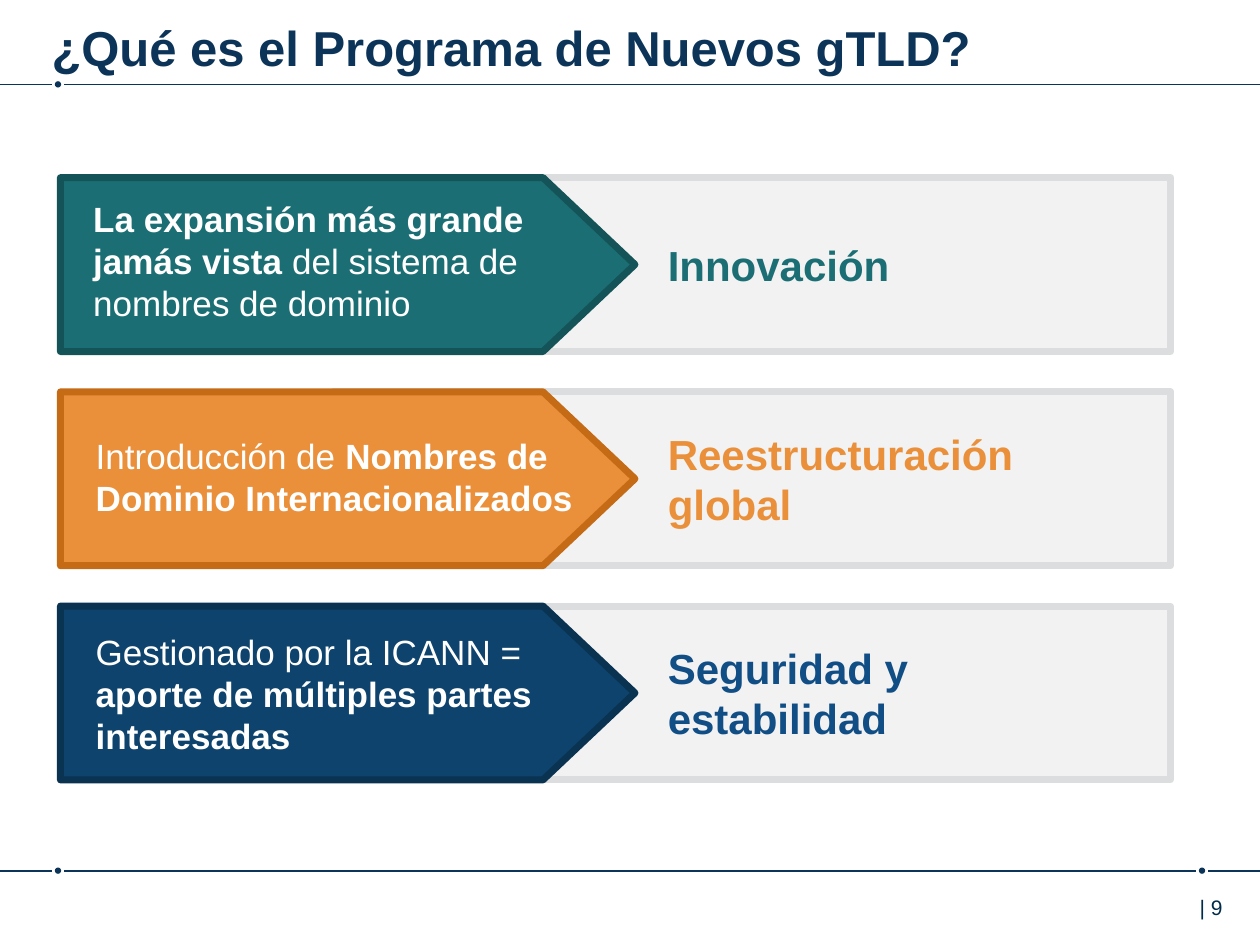
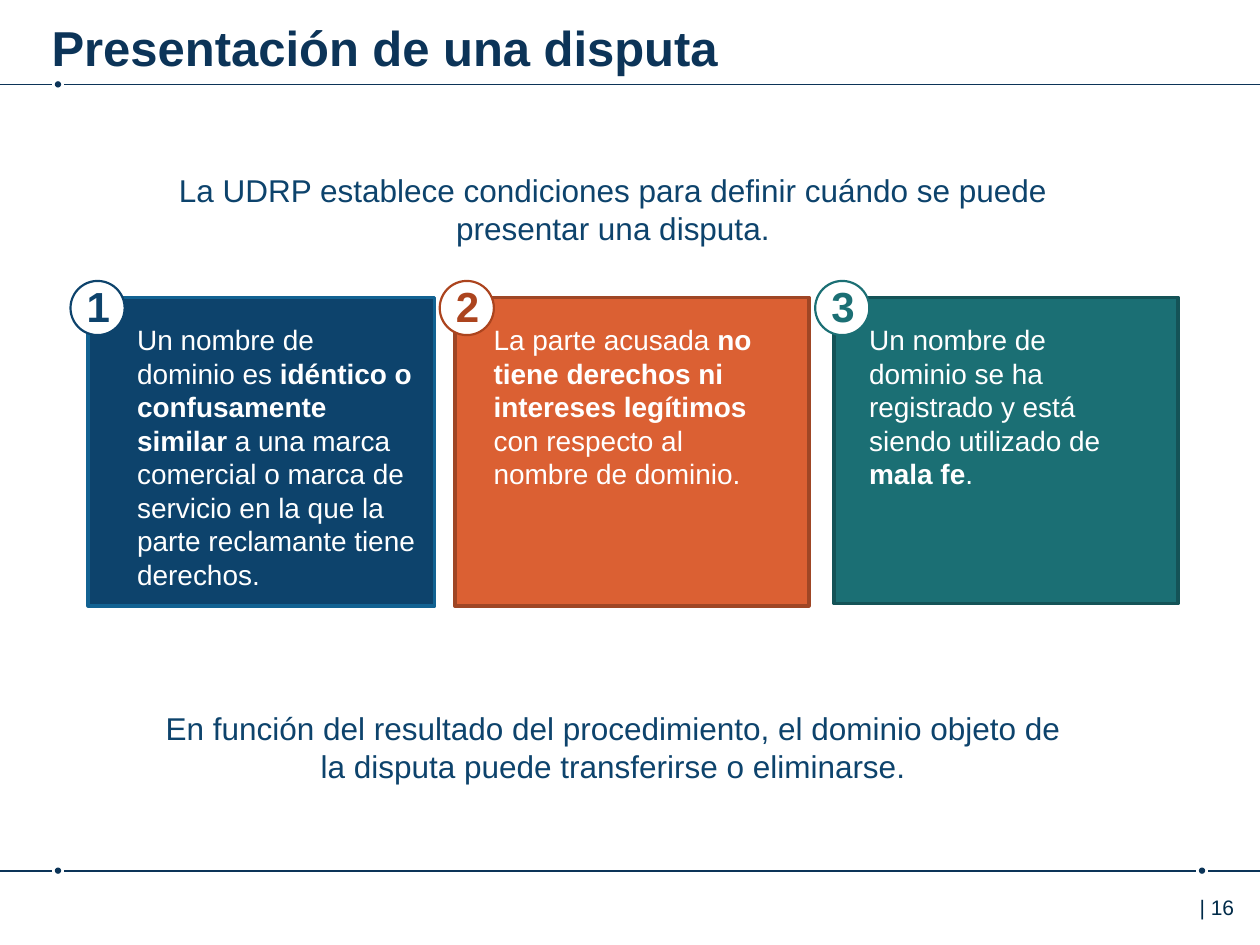
from pptx import Presentation
from pptx.dml.color import RGBColor
from pptx.enum import shapes, text
from pptx.oxml import ns, xmlchemy
from pptx.util import Inches, Pt

NAVY = RGBColor(0x0C, 0x34, 0x58)
INK = RGBColor(0x00, 0x2B, 0x49)
WHITE = RGBColor(0xFF, 0xFF, 0xFF)
PALE = RGBColor(0xF2, 0xF2, 0xF2)
SILVER = RGBColor(0xDC, 0xDD, 0xDE)
TEAL = RGBColor(0x1B, 0x6F, 0x74)
TEAL_EDGE = RGBColor(0x14, 0x53, 0x57)
ORANGE = RGBColor(0xEA, 0x90, 0x3A)
ORANGE_EDGE = RGBColor(0xC6, 0x6B, 0x15)
BLUE = RGBColor(0x0D, 0x43, 0x6C)
BLUE_DARK = RGBColor(0x0A, 0x32, 0x51)
BLUE_EDGE = RGBColor(0x12, 0x62, 0x92)
BLUE_TEXT = RGBColor(0x11, 0x4E, 0x85)
RUST = RGBColor(0xDB, 0x60, 0x33)
RUST_EDGE = RGBColor(0x9F, 0x46, 0x25)
RUST_TEXT = RGBColor(0xAC, 0x44, 0x1E)

FONT = "Arial"
SLIDE_WIDTH, SLIDE_HEIGHT = 10, 7.5
HEADER_Y, FOOTER_Y = 0.67, 6.91
DOT_SIZE = 0.05
PLAIN_INSETS = (0, 0, 0, 0)
BOX_INSETS = (0.1, 0.05, 0.1, 0.05)
ARROW_INSETS = (0.3, 0, 0.3, 0.15)
BENEFIT_INSETS = (0.5, 0, 0.2, 0.1)


def add_text(slide, box, runs, size, color, insets=PLAIN_INSETS,
             anchor=text.MSO_ANCHOR.TOP, align=text.PP_ALIGN.LEFT):
    """Write one paragraph of (wording, bold) runs in a wrapped text box."""
    frame = slide.shapes.add_textbox(*map(Inches, box)).text_frame
    left, top, right, bottom = map(Inches, insets)
    layout = {"word_wrap": True, "vertical_anchor": anchor, "margin_left": left,
              "margin_top": top, "margin_right": right, "margin_bottom": bottom}
    for name, value in layout.items():
        setattr(frame, name, value)
    paragraph = frame.paragraphs[0]
    paragraph.alignment = align
    for wording, bold in runs:
        run = paragraph.add_run()
        run.text = wording
        for name, value in {"name": FONT, "size": Pt(size), "bold": bold}.items():
            setattr(run.font, name, value)
        run.font.color.rgb = color


def paint(shape, fill, edge=None, width=0):
    """Give a shape a flat fill and an optional outline."""
    shape.shadow.inherit = False
    shape.fill.solid()
    shape.fill.fore_color.rgb = fill
    if edge is None:
        shape.line.fill.background()
    else:
        shape.line.color.rgb = edge
        shape.line.width = Pt(width)


def add_preset(slide, kind, box, fill, edge=None, width=0):
    """Add a painted preset shape."""
    paint(slide.shapes.add_shape(kind, *map(Inches, box)), fill, edge, width)


def add_outline(slide, points, fill, edge, width):
    """Add a painted closed polygon through points in inches."""
    corners = [(Inches(x), Inches(y)) for x, y in points]
    builder = slide.shapes.build_freeform(*corners[0])
    builder.add_line_segments(corners[1:], close=True)
    paint(builder.convert_to_shape(), fill, edge, width)


def add_dotted_rule(slide, y, dots):
    """Draw a full-width rule interrupted by a dot at each given centre."""
    stops = [0]
    for center in dots:
        add_preset(slide, shapes.MSO_SHAPE.OVAL,
                   (center - DOT_SIZE / 2, y - DOT_SIZE / 2, DOT_SIZE, DOT_SIZE), NAVY)
        stops += [center - DOT_SIZE, center + DOT_SIZE]
    stops.append(SLIDE_WIDTH)
    for start, end in zip(stops[::2], stops[1::2]):
        rule = slide.shapes.add_connector(shapes.MSO_CONNECTOR.STRAIGHT, Inches(start),
                                          Inches(y), Inches(end), Inches(y))
        rule.line.color.rgb = NAVY
        rule.line.width = Pt(1)
        properties = rule._element.spPr
        properties.append(xmlchemy.OxmlElement("a:effectLst"))


def add_framed_slide(presentation, title, number):
    """Add a slide with the shared title, rules and page number."""
    slide = presentation.slides.add_slide(presentation.slide_layouts[6])
    add_dotted_rule(slide, HEADER_Y, [0.46])
    add_dotted_rule(slide, FOOTER_Y, [0.46, 9.54])
    add_text(slide, (9.29, 7.05, 0.71, 0.4), [(f"| {number}", False)], 12, INK,
             (0.23, 0.05, 0, 0.05))
    add_text(slide, (0.41, 0.05, 8.76, 0.49), [(title, True)], 28, NAVY, (0, 0.09, 0, 0))
    return slide


def add_arrow_row(slide, box, fill, edge, label_box, label_insets, label,
                  benefit, benefit_color, benefit_width):
    """Draw a pale band with a pointed label on its left and a benefit on its right."""
    left, top, width, height = box
    right, bottom = left + width, top + height
    band_left, shoulder, tip = left + 2.17, left + 3.83, left + 4.56
    add_outline(slide, [(band_left, top), (right, top), (right, bottom),
                        (band_left, bottom)], PALE, SILVER, 4)
    add_outline(slide, [(left, top), (shoulder, top), (tip, top + height / 2),
                        (shoulder, bottom), (left, bottom)], fill, edge, 4)
    dx, dy, label_width, label_height = label_box
    middle = text.MSO_ANCHOR.MIDDLE
    add_text(slide, (left + dx, top + dy, label_width, label_height), label, 20, WHITE,
             label_insets, middle)
    add_text(slide, (left + 4.32, top - 0.18, benefit_width, 1.84), [(benefit, True)], 24,
             benefit_color, BENEFIT_INSETS, middle)


def build_program_slide(presentation):
    """Build the slide that explains the program in three arrow rows."""
    slide = add_framed_slide(presentation, "¿Qué es el Programa de Nuevos gTLD?", 9)
    rows = [
        (TEAL, TEAL_EDGE, (0.26, 0.14, 4.2, 1.04), PLAIN_INSETS,
         [("La expansión más grande jamás vista ", True),
          ("del sistema de nombres de dominio", False)],
         "Innovación", TEAL, 4.12),
        (ORANGE, ORANGE_EDGE, (-0.02, 0.15, 4.52, 1.19), ARROW_INSETS,
         [("Introducción de ", False), ("Nombres de Dominio Internacionalizados", True)],
         "Reestructuración global", ORANGE, 4.41),
        (BLUE, BLUE_DARK, (-0.02, 0.16, 4.43, 1.22), ARROW_INSETS,
         [("Gestionado por la ICANN = ", False),
          ("aporte de múltiples partes interesadas", True)],
         "Seguridad y estabilidad", BLUE_TEXT, 4.12),
    ]
    for index, row in enumerate(rows):
        add_arrow_row(slide, (0.48, 1.41 + 1.7 * index, 8.81, 1.38), *row)


def add_condition(slide, number, box, fill, edge, accent, badge_left, text_box, runs):
    """Draw a condition panel with a numbered badge over its top left corner."""
    left, top = box[:2]
    badge_top, badge_size = top - 0.13, 0.43
    add_preset(slide, shapes.MSO_SHAPE.RECTANGLE, box, fill, edge, 2)
    add_preset(slide, shapes.MSO_SHAPE.OVAL,
               (left + badge_left, badge_top, badge_size, badge_size), WHITE, accent, 1.25)
    add_text(slide, (left + badge_left + 0.03, badge_top - 0.05, 0.73, 0.5),
             [(str(number), True)], 24, accent, BOX_INSETS)
    dx, width, height = text_box
    add_text(slide, (left + dx, top + 0.15, width, height), runs, 16, WHITE, BOX_INSETS)


def build_dispute_slide(presentation):
    """Build the slide with the three conditions for a dispute."""
    slide = add_framed_slide(presentation, "Presentación de una disputa", 16)
    statements = [
        (1.36, "La UDRP establece condiciones para definir cuándo se puede "
               "presentar una disputa."),
        (5.63, "En función del resultado del procedimiento, el dominio objeto de "
               "la disputa puede transferirse o eliminarse."),
    ]
    for top, statement in statements:
        add_text(slide, (1.31, top, 7.11, 0.61), [(statement, False)], 18, BLUE,
                 align=text.PP_ALIGN.CENTER)
    conditions = [
        ((0.7, 2.36, 2.75, 2.45), BLUE, BLUE_EDGE, BLUE, -0.14, (0.29, 2.42, 1.99),
         [("Un nombre de dominio es ", False), ("idéntico o confusamente similar", True),
          (" a una marca comercial o marca de servicio en la que la parte "
           "reclamante tiene derechos.", False)]),
        ((3.61, 2.36, 2.81, 2.45), RUST, RUST_EDGE, RUST_TEXT, -0.12, (0.21, 2.33, 1.45),
         [("La parte acusada ", False), ("no tiene derechos ni intereses legítimos", True),
          (" con respecto al nombre de dominio.", False)]),
        ((6.62, 2.36, 2.73, 2.43), TEAL, TEAL_EDGE, TEAL, -0.15, (0.18, 2.33, 1.18),
         [("Un nombre de dominio se ha registrado y está siendo utilizado de ", False),
          ("mala fe", True), (".", False)]),
    ]
    for number, condition in enumerate(conditions, start=1):
        add_condition(slide, number, *condition)


def main():
    """Build and save the presentation."""
    presentation = Presentation()
    presentation.slide_width = Inches(SLIDE_WIDTH)
    presentation.slide_height = Inches(SLIDE_HEIGHT)
    build_program_slide(presentation)
    build_dispute_slide(presentation)
    presentation.save("out.pptx")


if __name__ == "__main__":
    main()
